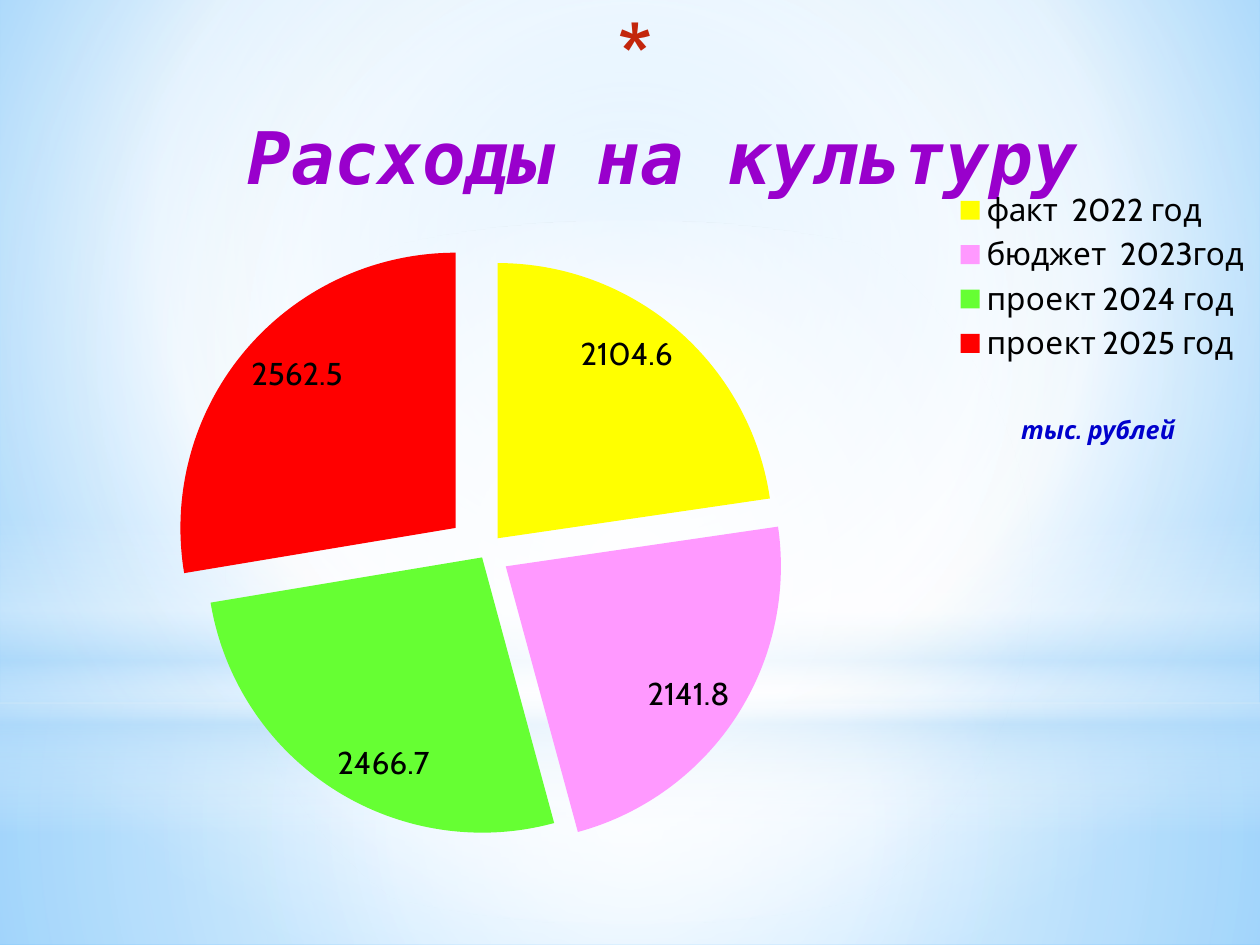
"""Build a slide with an exploded pie chart of spending on culture."""
import pptx
import pptx.chart.data
import pptx.dml.color
import pptx.enum.chart
import pptx.enum.shapes
import pptx.enum.text
import pptx.oxml
import pptx.oxml.ns
import pptx.util
from lxml import etree

RGBColor = pptx.dml.color.RGBColor
Shapes = pptx.enum.shapes.MSO_SHAPE
qn = pptx.oxml.ns.qn
WIDTH, HEIGHT = 10, 7.5

BLACK = RGBColor(0, 0, 0)
PURPLE = RGBColor(0x99, 0x00, 0xCC)
BLUE = RGBColor(0x00, 0x00, 0xCC)
RUST = RGBColor(0xC3, 0x26, 0x0C)
WHITE = RGBColor(0xFF, 0xFF, 0xFF)
MIST = RGBColor(0xB4, 0xDC, 0xFA)
SKY = RGBColor(0x9E, 0xD5, 0xFF)
AZURE = RGBColor(0x5B, 0xB9, 0xFF)

TITLE = "Расходы на культуру"
UNIT = "тыс. рублей"
SLICES = [
    ("факт  2022 год", 2104.6, RGBColor(0xFF, 0xFF, 0x00), 7),
    ("бюджет  2023год", 2141.8, RGBColor(0xFF, 0x99, 0xFF), 9),
    ("проект 2024 год", 2466.7, RGBColor(0x66, 0xFF, 0x33), 2),
    ("проект 2025 год", 2562.5, RGBColor(0xFF, 0x00, 0x00), 14),
]
SERIES_EXPLOSION = 25
PLOT_LAYOUT = (0.04, 0.08, 0.69, 0.86)
LEGEND_LAYOUT = (0.75, 0.05, 0.25, 0.23)

CENTRE = (50, 50, 50, 50)
BACKGROUND = [(0, SKY, 100), (60, WHITE, 100), (100, AZURE, 100)]
BACKGROUND_FOCUS = (20, 10, 20, 60)
HORIZON = 5.58
BACKDROP = [
    (Shapes.RECTANGLE, (0, HORIZON, WIDTH, HEIGHT - HORIZON),
     [(0, WHITE, 91), (37, WHITE, 76), (100, MIST, 79)], CENTRE),
    (Shapes.RECTANGLE, (0, 0, WIDTH, HORIZON),
     [(0, WHITE, 89), (48, WHITE, 62), (100, MIST, 79)], CENTRE),
    (Shapes.RECTANGLE, (0, 4.12, WIDTH, 2.5),
     [(0, WHITE, 0), (29, WHITE, 30), (45, MIST, 40), (55, WHITE, 26),
      (65, MIST, 60), (100, WHITE, 0)], None),
    (Shapes.OVAL, (0, 1.75, WIDTH, HORIZON),
     [(0, WHITE, 100), (56, WHITE, 0)], CENTRE),
]


def inches(box):
    return [pptx.util.Inches(length) for length in box]


def child(parent, tag, **attributes):
    values = {name: str(value) for name, value in attributes.items()}
    return etree.SubElement(parent, qn(tag), values)


def set_gradient(element, stops, focus):
    """Replace the first solid fill; without a focus the gradient runs down."""
    solid = element.find(".//" + qn("a:solidFill"))
    gradient = pptx.oxml.parse_xml(
        f"<a:gradFill {pptx.oxml.ns.nsdecls('a')} rotWithShape='1'/>")
    stop_list = child(gradient, "a:gsLst")
    for position, color, opacity in stops:
        stop = child(stop_list, "a:gs", pos=position * 1000)
        color_element = child(stop, "a:srgbClr", val=color)
        if opacity < 100:
            child(color_element, "a:alpha", val=opacity * 1000)
    if focus:
        route = child(gradient, "a:path", path="circle")
        sides = {side: share * 1000 for side, share in zip("ltrb", focus)}
        child(route, "a:fillToRect", **sides)
    else:
        child(gradient, "a:lin", ang=90 * 60000, scaled=0)
    solid.getparent().replace(solid, gradient)


def add_backdrop(slide):
    slide.background.fill.solid()
    set_gradient(slide.element, BACKGROUND, BACKGROUND_FOCUS)
    for kind, box, stops, focus in BACKDROP:
        shape = slide.shapes.add_shape(kind, *inches(box))
        shape.shadow.inherit = False
        shape.line.fill.background()
        shape.fill.solid()
        set_gradient(shape.element, stops, focus)


def add_text(slide, box, text, font_name, size, color):
    frame = slide.shapes.add_textbox(*inches(box)).text_frame
    frame.word_wrap = True
    frame.margin_left = frame.margin_right = 0
    frame.margin_top = frame.margin_bottom = 0
    paragraph = frame.paragraphs[0]
    paragraph.text = text
    paragraph.alignment = pptx.enum.text.PP_ALIGN.CENTER
    font = paragraph.font
    font.name, font.size = font_name, pptx.util.Pt(size)
    font.bold = font.italic = True
    font.color.rgb = color
    return paragraph


def add_bullet(paragraph, character, color, percent):
    properties = paragraph._p.get_or_add_pPr()
    indent = pptx.util.Inches(0.35)
    properties.set("marL", str(indent))
    properties.set("indent", str(-indent))
    holder = etree.Element("holder")
    child(child(holder, "a:buClr"), "a:srgbClr", val=color)
    child(holder, "a:buSzPct", val=percent * 1000)
    child(holder, "a:buChar", char=character)
    for position, element in enumerate(list(holder)):
        properties.insert(position, element)


def make_layout(box, inner=False):
    layout = pptx.oxml.parse_xml(f"<c:layout {pptx.oxml.ns.nsdecls('c')}/>")
    manual = child(layout, "c:manualLayout")
    if inner:
        child(manual, "c:layoutTarget", val="inner")
    for axis in "xy":
        child(manual, f"c:{axis}Mode", val="edge")
    for name, share in zip("xywh", box):
        child(manual, f"c:{name}", val=share)
    return layout


def add_pie(slide):
    data = pptx.chart.data.CategoryChartData(number_format="General")
    data.categories = [name for name, *_ in SLICES]
    data.add_series("Series 1", [value for _, value, *_ in SLICES])
    chart = slide.shapes.add_chart(
        pptx.enum.chart.XL_CHART_TYPE.PIE,
        *inches((0, 1.15, WIDTH, HEIGHT - 1.15)), data).chart
    chart.has_title = False
    chart.font.name, chart.font.size = "Cabin", pptx.util.Pt(18)
    chart.font.color.rgb = BLACK
    chart.has_legend = True
    chart.legend.position = pptx.enum.chart.XL_LEGEND_POSITION.RIGHT
    chart.legend.include_in_layout = False

    plot = chart.plots[0]
    plot.vary_by_categories = True
    plot.has_data_labels = True
    plot.data_labels.show_value = True
    plot.data_labels.show_percentage = False
    plot.data_labels.position = pptx.enum.chart.XL_LABEL_POSITION.INSIDE_END

    series = plot.series[0]
    for index, (_, _, color, explosion) in enumerate(SLICES):
        fill = series.points[index].format.fill
        fill.solid()
        fill.fore_color.rgb = color
    points = series._element.findall(qn("c:dPt"))
    for point, (*_, explosion) in zip(points, SLICES):
        element = child(point, "c:explosion", val=explosion)
        point.find(qn("c:spPr")).addprevious(element)
    element = child(series._element, "c:explosion", val=SERIES_EXPLOSION)
    points[0].addprevious(element)

    plot_area = chart._chartSpace.find(".//" + qn("c:plotArea"))
    for existing in plot_area.findall(qn("c:layout")):
        plot_area.remove(existing)
    plot_area.insert(0, make_layout(PLOT_LAYOUT, inner=True))
    legend = chart._chartSpace.find(".//" + qn("c:legend"))
    for existing in legend.findall(qn("c:layout")):
        legend.remove(existing)
    legend.find(qn("c:legendPos")).addnext(make_layout(LEGEND_LAYOUT))


def main():
    presentation = pptx.Presentation()
    presentation.slide_width, presentation.slide_height = inches((WIDTH, HEIGHT))
    slide = presentation.slides.add_slide(presentation.slide_layouts[6])
    add_backdrop(slide)
    title = add_text(slide, (0.33, 0.2, 9.5, 1.4), "\v" + TITLE,
                     "DejaVu Sans Mono", 41.4, PURPLE)
    add_bullet(title, "*", RUST, 128)
    add_text(slide, (7.7, 3.29, 2.03, 0.3), UNIT, "Cabin", 14.4, BLUE)
    add_pie(slide)
    presentation.save("out.pptx")


if __name__ == "__main__":
    main()
